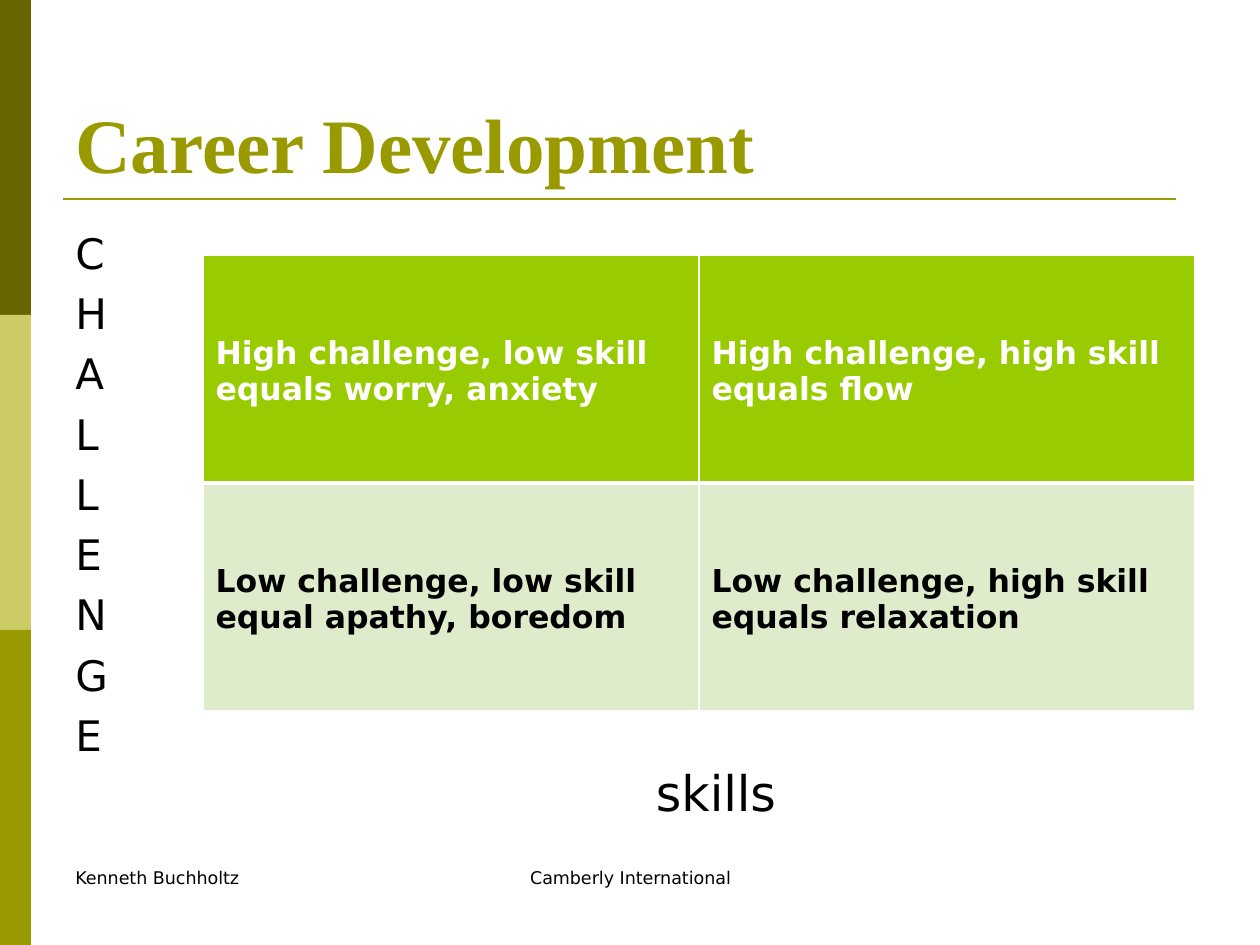
"""Build the Career Development slide with its challenge and skill matrix."""
import pptx
import pptx.dml.color
import pptx.enum.shapes
import pptx.enum.text
import pptx.oxml
import pptx.oxml.ns
import pptx.util

PX = 914400 // 126
THEME = {
    "dark": "666600", "pale": "CCCC66", "olive": "999900",
    "green": "99CC00", "mint": "DEECCC", "white": "FFFFFF", "black": "000000",
    "sans": "DejaVu Sans", "serif": "Times New Roman",
    "title": 44, "axis": 28, "letter": 24, "cell": 18, "footer": 10,
}
ALIGN = pptx.enum.text.PP_ALIGN
ANCHOR = pptx.enum.text.MSO_ANCHOR


def color(name):
    return pptx.dml.color.RGBColor.from_string(THEME[name])


def write(frame, lines, size, ink="black", face="sans", bold=False, **layout):
    frame.word_wrap = True
    for index, line in enumerate(lines):
        para = frame.paragraphs[0] if index == 0 else frame.add_paragraph()
        for name, value in layout.items():
            setattr(para, name, value)
        span = para.add_run()
        span.text = line
        values = {"name": THEME[face], "size": pptx.util.Pt(THEME[size]), "bold": bold}
        for name, value in values.items():
            setattr(span.font, name, value)
        span.font.color.rgb = color(ink)


deck = pptx.Presentation()
deck.slide_width, deck.slide_height = 1260 * PX, 945 * PX
page = deck.slides.add_slide(deck.slide_layouts[6])

for index, name in enumerate(["dark", "pale", "olive"]):
    band = page.shapes.add_shape(
        pptx.enum.shapes.MSO_SHAPE.RECTANGLE, 0, index * 315 * PX, 31 * PX, 315 * PX)
    band.shadow.inherit = False
    band.fill.solid()
    band.fill.fore_color.rgb = color(name)
    band.line.fill.background()

rule = page.shapes.add_connector(
    pptx.enum.shapes.MSO_CONNECTOR.STRAIGHT, 63 * PX, 199 * PX, 1176 * PX, 199 * PX)
rule.line.color.rgb = color("olive")
rule.line.width = pptx.util.Pt(1.5)
rule._element.spPr.append(pptx.oxml.parse_xml(
    f"<a:effectLst {pptx.oxml.ns.nsdecls('a')}/>"))

texts = [
    ((63, 38, 1134, 157), ["Career Development"], "title",
     {"ink": "olive", "face": "serif", "bold": True}, ANCHOR.BOTTOM),
    ((63, 221, 100, 535), list("CHALLENGE"), "letter",
     {"space_before": pptx.util.Pt(5.65)}, ANCHOR.TOP),
    ((600, 756, 232, 70), ["skills"], "axis", {"alignment": ALIGN.CENTER}, ANCHOR.TOP),
    ((63, 861, 294, 63), ["Kenneth Buchholtz"], "footer", {}, ANCHOR.TOP),
    ((431, 861, 399, 63), ["Camberly International"], "footer",
     {"alignment": ALIGN.CENTER}, ANCHOR.TOP),
]
for place, lines, size, style, anchor in texts:
    box = page.shapes.add_textbox(*(length * PX for length in place))
    box.text_frame.vertical_anchor = anchor
    write(box.text_frame, lines, size, **style)

matrix = [
    ("green", "white", 1, 3, [
        ["High challenge, low skill", "equals worry, anxiety"],
        ["High challenge, high skill", "equals flow"]]),
    ("mint", "black", 3, 1, [
        ["Low challenge, low skill", "equal apathy, boredom"],
        ["Low challenge, high skill", "equals relaxation"]]),
]
table = page.shapes.add_table(2, 2, 203 * PX, 255 * PX, 992 * PX, 456 * PX).table
table.first_row = False
table.horz_banding = False
for row, (fill, ink, top, bottom, entries) in enumerate(matrix):
    for column, lines in enumerate(entries):
        cell = table.cell(row, column)
        cell.margin_top = 80 * PX
        write(cell.text_frame, lines, "cell", ink, bold=True)
        for side, width in {"L": 1, "R": 1, "T": top, "B": bottom}.items():
            cell._tc.get_or_add_tcPr().append(pptx.oxml.parse_xml(
                f'<a:ln{side} {pptx.oxml.ns.nsdecls("a")} w="{pptx.util.Pt(width)}">'
                f'<a:solidFill><a:srgbClr val="{THEME["white"]}"/></a:solidFill>'
                f'</a:ln{side}>'))
        cell.fill.solid()
        cell.fill.fore_color.rgb = color(fill)

deck.save("out.pptx")
